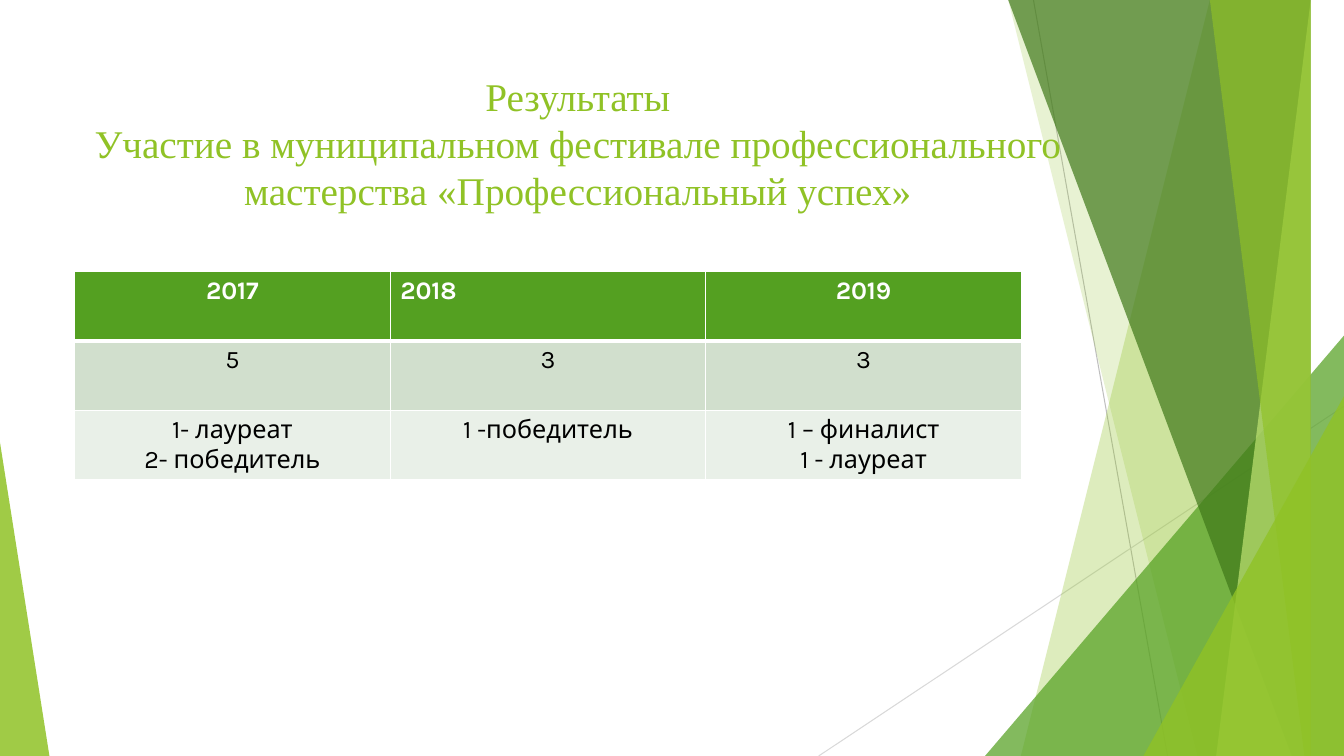
import pptx
import pptx.util
import pptx.dml.color
import pptx.enum.shapes
import pptx.enum.text
import pptx.oxml
import pptx.oxml.ns
import pptx.oxml.xmlchemy

Inches, Pt = pptx.util.Inches, pptx.util.Pt
RGBColor = pptx.dml.color.RGBColor
ALIGN = pptx.enum.text.PP_ALIGN
qn = pptx.oxml.ns.qn
OxmlElement = pptx.oxml.xmlchemy.OxmlElement

LIME = RGBColor(0x90, 0xC2, 0x26)
GREEN = RGBColor(0x54, 0xA0, 0x21)
DARK = RGBColor(0x3F, 0x78, 0x19)
PALE = RGBColor(0xC0, 0xE4, 0x74)
BAND_1 = RGBColor(0xD1, 0xDF, 0xCD)
BAND_2 = RGBColor(0xE9, 0xF0, 0xE8)
GREY = RGBColor(0xBF, 0xBF, 0xBF)
LIGHT_GREY = RGBColor(0xD9, 0xD9, 0xD9)
WHITE = RGBColor(0xFF, 0xFF, 0xFF)
BLACK = RGBColor(0, 0, 0)

WIDTH, HEIGHT, TOP = 13.33, 7.5, -0.01
TITLE = ("Результаты\vУчастие в муниципальном фестивале "
         "профессионального мастерства «Профессиональный успех»")
TITLE_BOX = (0.74, 0.67, 9.98, 1.44)
ROWS = [
    ["2017", "2018", "2019"],
    ["5", "3", "3"],
    ["1- лауреат\n2- победитель", "1 -победитель", "1 – финалист\n1 - лауреат"],
]
ROW_FILLS = [GREEN, BAND_1, BAND_2]
TABLE_LEFT, TABLE_TOP, COL_WIDTH, ROW_HEIGHT = 0.74, 2.69, 3.13, 0.69
LINES = [
    (10.25, 0, 11.58, HEIGHT, GREY),
    (WIDTH, 4.03, 8.12, HEIGHT, LIGHT_GREY),
]
# kind, geometry, colour, opacity in percent
DECOR = [
    ("band", (12.28, 10.04), LIME, 30),
    ("band", (10.5, 11.83), LIME, 20),
    ("triangle", (9.77, 3.33, 3.56, 4.17, 1), GREEN, 72),
    ("band", (10.21, 12.91), DARK, 70),
    ("band", (13.03, 11.92), PALE, 70),
    ("band", (11.96, 13.18), LIME, 65),
    ("triangle", (11.34, 3.93, 1.99, 3.57, 1), LIME, 80),
    ("triangle", (0, 4.39, 0.49, 3.11, 0), LIME, 85),
]


def apply(obj, values):
    """Set every attribute named in a dict."""
    for name, value in values.items():
        setattr(obj, name, value)


def add_band(s, top_x, bottom_x):
    """Draw a panel from a slanted edge to the right side of the slide."""
    builder = s.shapes.build_freeform(top_x, TOP, scale=Inches(1))
    builder.add_line_segments([(WIDTH, TOP), (WIDTH, HEIGHT), (bottom_x, HEIGHT)], close=True)
    return builder.convert_to_shape()


def add_triangle(s, left, top, width, height, apex):
    """Draw a right triangle with its apex at the given side."""
    kind = pptx.enum.shapes.MSO_SHAPE.ISOSCELES_TRIANGLE
    sp = s.shapes.add_shape(kind, *map(Inches, (left, top, width, height)))
    sp.adjustments[0] = apex
    return sp


def add_decor(s):
    """Draw the thin lines and the translucent panels."""
    for x1, y1, x2, y2, color in LINES:
        line = s.shapes.add_connector(
            pptx.enum.shapes.MSO_CONNECTOR.STRAIGHT, *map(Inches, (x1, y1, x2, y2)))
        line.line.color.rgb, line.line.width = color, Pt(0.75)
        line._element.spPr.append(OxmlElement("a:effectLst"))
    draw = {"band": add_band, "triangle": add_triangle}
    for kind, geometry, color, opacity in DECOR:
        sp = draw[kind](s, *geometry)
        sp.shadow.inherit = False
        sp.line.fill.background()
        sp.fill.solid()
        sp.fill.fore_color.rgb = color
        alpha = OxmlElement("a:alpha")
        alpha.set("val", str(opacity * 1000))
        sp._element.spPr.find(qn("a:solidFill"))[0].append(alpha)


def add_title(s):
    """Place and format the title above the panels."""
    title = s.shapes.title
    s.shapes._spTree.append(title._element)
    apply(title, dict(zip(("left", "top", "width", "height"), map(Inches, TITLE_BOX))))
    tf = title.text_frame
    apply(tf, {"text": TITLE, "word_wrap": True,
               "auto_size": pptx.enum.text.MSO_AUTO_SIZE.NONE,
               "vertical_anchor": pptx.enum.text.MSO_ANCHOR.TOP})
    p = tf.paragraphs[0]
    p.alignment = ALIGN.CENTER
    for r in p.runs:
        apply(r.font, {"name": "Times New Roman", "size": Pt(28)})
        r.font.color.rgb = LIME


def add_border(cell, side, width):
    """Give one side of a cell a white line."""
    ln = OxmlElement("a:" + side)
    ln.set("w", str(Pt(width)))
    fill, color = OxmlElement("a:solidFill"), OxmlElement("a:srgbClr")
    color.set("val", str(WHITE))
    fill.append(color)
    ln.append(fill)
    cell._tc.get_or_add_tcPr().append(ln)


def add_results(s):
    """Build the table of results by year."""
    rows, cols = len(ROWS), len(ROWS[0])
    table = s.shapes.add_table(rows, cols, *map(Inches, (
        TABLE_LEFT, TABLE_TOP, COL_WIDTH * cols, ROW_HEIGHT * rows))).table
    for column in table.columns:
        column.width = Inches(COL_WIDTH)
    for i, texts in enumerate(ROWS):
        table.rows[i].height = Inches(ROW_HEIGHT)
        for j, text in enumerate(texts):
            cell = table.cell(i, j)
            cell.text = text
            for side in ("lnL", "lnR", "lnT", "lnB"):
                under_header = (i, side) in ((0, "lnB"), (1, "lnT"))
                add_border(cell, side, 3 if under_header else 1)
            cell.fill.solid()
            cell.fill.fore_color.rgb = ROW_FILLS[i]
            for p in cell.text_frame.paragraphs:
                p.alignment = ALIGN.LEFT if (i, j) == (0, 1) else ALIGN.CENTER
                for r in p.runs:
                    apply(r.font, {"name": "Karla", "size": Pt(18), "bold": i == 0})
                    r.font.color.rgb = WHITE if i == 0 else BLACK


def main():
    """Build the slide and save it."""
    prs = pptx.Presentation()
    apply(prs, {"slide_width": Inches(WIDTH), "slide_height": Inches(HEIGHT)})
    s = prs.slides.add_slide(prs.slide_layouts[5])
    add_decor(s)
    add_title(s)
    add_results(s)
    prs.save("out.pptx")


if __name__ == "__main__":
    main()
